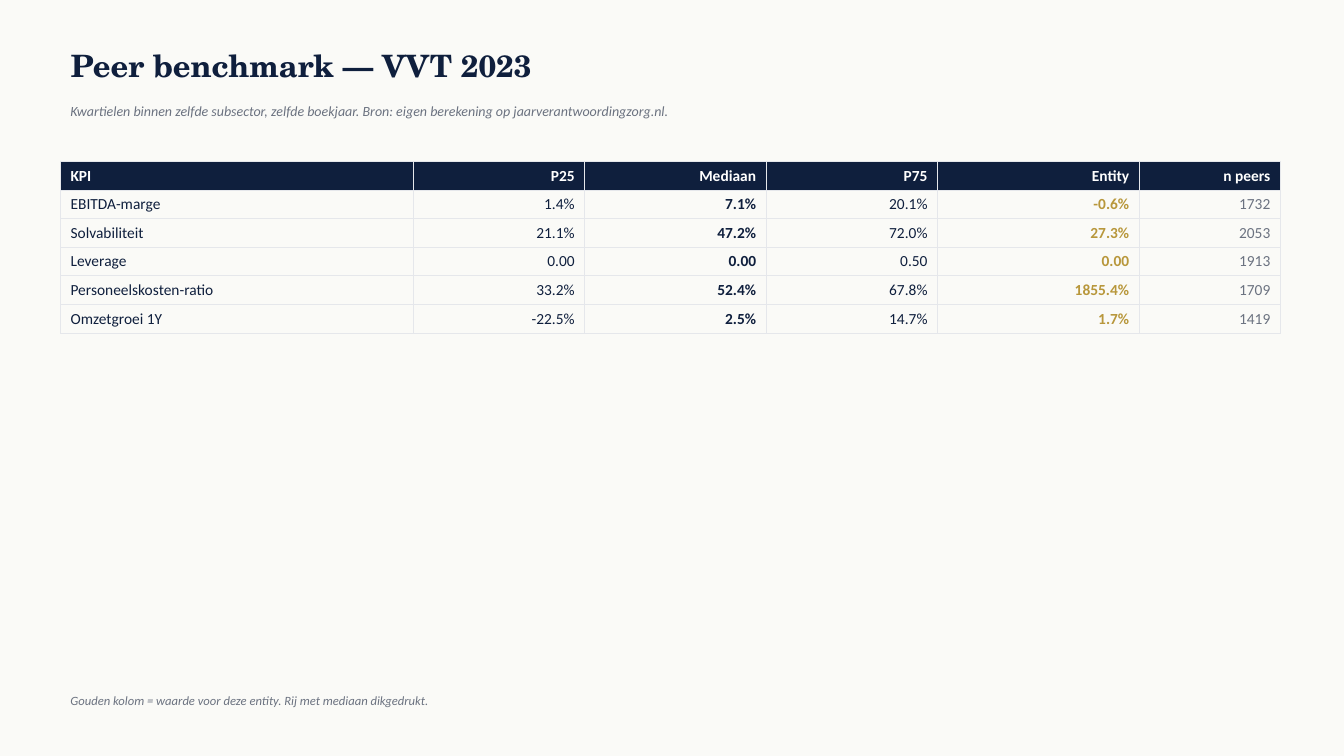
from lxml.etree import SubElement
from pptx import Presentation
from pptx.dml.color import RGBColor
from pptx.enum.text import MSO_ANCHOR, MSO_AUTO_SIZE, PP_ALIGN
from pptx.oxml.ns import qn
from pptx.util import Inches, Pt

COLORS = {"paper": "FAFAF7", "navy": "0F1F3D", "gold": "B8973B",
          "gray": "6B7280", "white": "FFFFFF", "rule": "E5E7EB"}
LEFT, TEXT_WIDTH = Inches(0.6), Inches(12)


def write(frame, text, size=11, color="navy", font="Calibri", bold=False,
          italic=False, align=PP_ALIGN.LEFT):
    paragraph = frame.paragraphs[0]
    paragraph.alignment = align
    run = paragraph.add_run()
    run.text = text
    run.font.name, run.font.size = font, Pt(size)
    run.font.bold, run.font.italic = bold, italic
    run.font.color.rgb = RGBColor.from_string(COLORS[color])


def draw_borders(cell, color, width):
    properties = cell._tc.get_or_add_tcPr()
    for position, side in enumerate(("a:lnL", "a:lnR", "a:lnT", "a:lnB")):
        line = SubElement(properties, qn(side), w=str(Pt(width)))
        fill = SubElement(line, qn("a:solidFill"))
        SubElement(fill, qn("a:srgbClr"), val=COLORS[color])
        properties.insert(position, line)


deck = Presentation()
deck.slide_width, deck.slide_height = Inches(13.33), Inches(7.5)
slide = deck.slides.add_slide(deck.slide_layouts[5])
slide.background.fill.solid()
slide.background.fill.fore_color.rgb = RGBColor.from_string(COLORS["paper"])

# Title
title = slide.shapes.title
title.left, title.top = LEFT, Inches(0.4)
title.width, title.height = TEXT_WIDTH, Inches(0.5)
title.text_frame.auto_size = MSO_AUTO_SIZE.NONE
title.text_frame.vertical_anchor = MSO_ANCHOR.MIDDLE
write(title.text_frame, "Peer benchmark — VVT 2023", size=22,
      font="TeX Gyre Schola", bold=True)

# Subtitle and footnote
for top, size, text in (
    (0.95, 10, "Kwartielen binnen zelfde subsector, zelfde boekjaar. "
               "Bron: eigen berekening op jaarverantwoordingzorg.nl."),
    (6.8, 9, "Gouden kolom = waarde voor deze entity. "
             "Rij met mediaan dikgedrukt."),
):
    note = slide.shapes.add_textbox(LEFT, Inches(top), TEXT_WIDTH, Inches(0.3))
    note.text_frame.word_wrap = True
    note.text_frame.vertical_anchor = MSO_ANCHOR.MIDDLE
    write(note.text_frame, text, size=size, color="gray", italic=True)

# Benchmark table: heading, width, colour and weight of each column
columns = [
    ("KPI", 3.5, "navy", False),
    ("P25", 1.7, "navy", False),
    ("Mediaan", 1.8, "navy", True),
    ("P75", 1.7, "navy", False),
    ("Entity", 2.0, "gold", True),
    ("n peers", 1.4, "gray", False),
]
benchmarks = [
    ("EBITDA-marge", "1.4%", "7.1%", "20.1%", "-0.6%", "1732"),
    ("Solvabiliteit", "21.1%", "47.2%", "72.0%", "27.3%", "2053"),
    ("Leverage", "0.00", "0.00", "0.50", "0.00", "1913"),
    ("Personeelskosten-ratio", "33.2%", "52.4%", "67.8%", "1855.4%", "1709"),
    ("Omzetgroei 1Y", "-22.5%", "2.5%", "14.7%", "1.7%", "1419"),
]
row_count = len(benchmarks) + 1
row_height = Inches(0.28)
table = slide.shapes.add_table(
    row_count, len(columns), LEFT, Inches(1.6),
    Inches(sum(width for _, width, _, _ in columns)),
    row_height * row_count).table
table.horz_banding = False

for row in table.rows:
    row.height = row_height

for c, (heading, width, color, bold) in enumerate(columns):
    table.columns[c].width = Inches(width)
    align = PP_ALIGN.RIGHT if c else PP_ALIGN.LEFT
    values = [heading] + [benchmark[c] for benchmark in benchmarks]
    for r, value in enumerate(values):
        cell = table.cell(r, c)
        if r == 0:
            cell.fill.solid()
            cell.fill.fore_color.rgb = RGBColor.from_string(COLORS["navy"])
            write(cell.text_frame, value, color="white", bold=True, align=align)
        else:
            cell.fill.background()
            write(cell.text_frame, value, color=color, bold=bold, align=align)
        draw_borders(cell, "rule", 0.5)

deck.save("out.pptx")
